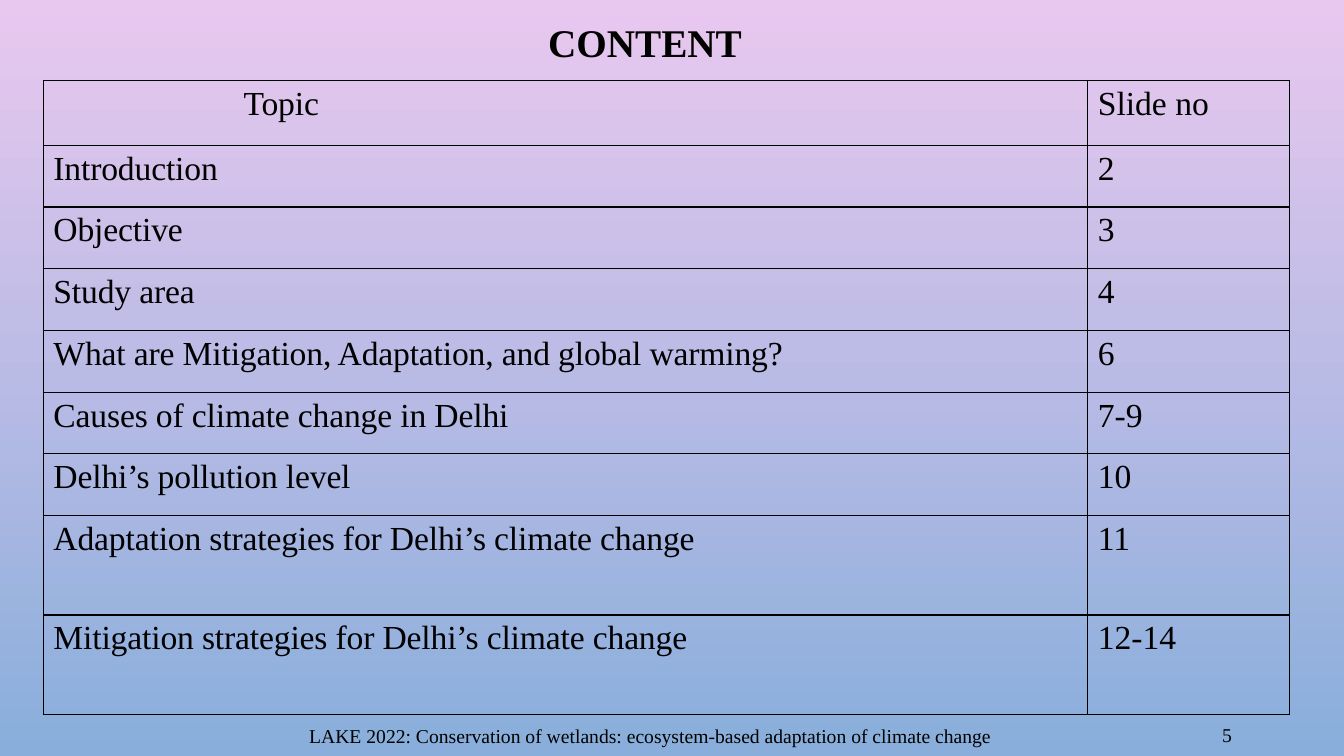
from lxml import etree
from pptx import Presentation
from pptx.dml.color import RGBColor
from pptx.enum import text
from pptx.oxml.ns import qn
from pptx.util import Pt

FONT = "Times New Roman"
BLACK = "000000"
TOPICS = [
    ("Topic", "Slide no"),
    ("Introduction", "2"),
    ("Objective", "3"),
    ("Study area", "4"),
    ("What are Mitigation, Adaptation, and global warming?", "6"),
    ("Causes of climate change in Delhi", "7-9"),
    ("Delhi’s pollution level", "10"),
    ("Adaptation strategies for Delhi’s climate change", "11"),
    ("Mitigation strategies for Delhi’s climate change", "12-14"),
]
ROW_HEIGHTS = [46.2] + [44.1] * 6 + [71] * 2
COLUMN_WIDTHS = [746, 144]


def color(value):
    return RGBColor.from_string(value)


def set_background(s, top, bottom):
    fill = s.background.fill
    fill.gradient()
    fill.gradient_angle = 270
    for stop, value in zip(fill.gradient_stops, (top, bottom)):
        stop.color.rgb = color(value)


def write(tf, content, size, bold=False, align=text.PP_ALIGN.LEFT):
    p = tf.paragraphs[0]
    r = p.add_run()
    r.text = content
    p.alignment = align
    p.font.name = FONT
    p.font.size = Pt(size)
    p.font.bold = bold
    p.font.color.rgb = color(BLACK)
    return r


def add_label(s, content, box, size, anchor=text.MSO_ANCHOR.MIDDLE, **style):
    tf = s.shapes.add_textbox(*map(Pt, box)).text_frame
    tf.word_wrap = True
    tf.vertical_anchor = anchor
    write(tf, content, size, **style)


def set_borders(cell, width, value):
    tcPr = cell._tc.get_or_add_tcPr()
    for i, side in enumerate(("lnL", "lnR", "lnT", "lnB")):
        ln = etree.Element(qn(f"a:{side}"), w=str(Pt(width)))
        fill = etree.SubElement(ln, qn("a:solidFill"))
        etree.SubElement(fill, qn("a:srgbClr"), val=value)
        tcPr.insert(i, ln)


def add_topic_table(s, left, top):
    frame = s.shapes.add_table(
        len(TOPICS), len(COLUMN_WIDTHS), Pt(left), Pt(top),
        Pt(sum(COLUMN_WIDTHS)), Pt(sum(ROW_HEIGHTS)))
    table = frame.table
    table.first_row = False
    table.horz_banding = False
    for column, width in zip(table.columns, COLUMN_WIDTHS):
        column.width = Pt(width)
    for row, height, contents in zip(table.rows, ROW_HEIGHTS, TOPICS):
        row.height = Pt(height)
        for cell, content in zip(row.cells, contents):
            cell.fill.background()
            set_borders(cell, 1, BLACK)
            r = write(cell.text_frame, content, 24)
            if content == contents[0]:
                r._r.get_or_add_rPr().set("spc", "-10")
    table.cell(0, 0).margin_left = Pt(143)


def main():
    prs = Presentation()
    prs.slide_width, prs.slide_height = Pt(960), Pt(540)
    s = prs.slides.add_slide(prs.slide_layouts[6])
    set_background(s, "E9C8EF", "89AEDB")
    add_label(s, "CONTENT", (0, 9.5, 921.5, 42), 28,
              anchor=text.MSO_ANCHOR.TOP, bold=True, align=text.PP_ALIGN.CENTER)
    add_label(s, "LAKE 2022: Conservation of wetlands: ecosystem-based adaptation of climate change",
              (213.8, 511.2, 525.6, 28.8), 14)
    add_label(s, "5", (826.6, 510.5, 60.5, 28.8), 14, align=text.PP_ALIGN.RIGHT)
    add_topic_table(s, 31, 57.6)
    prs.save("out.pptx")


if __name__ == "__main__":
    main()
